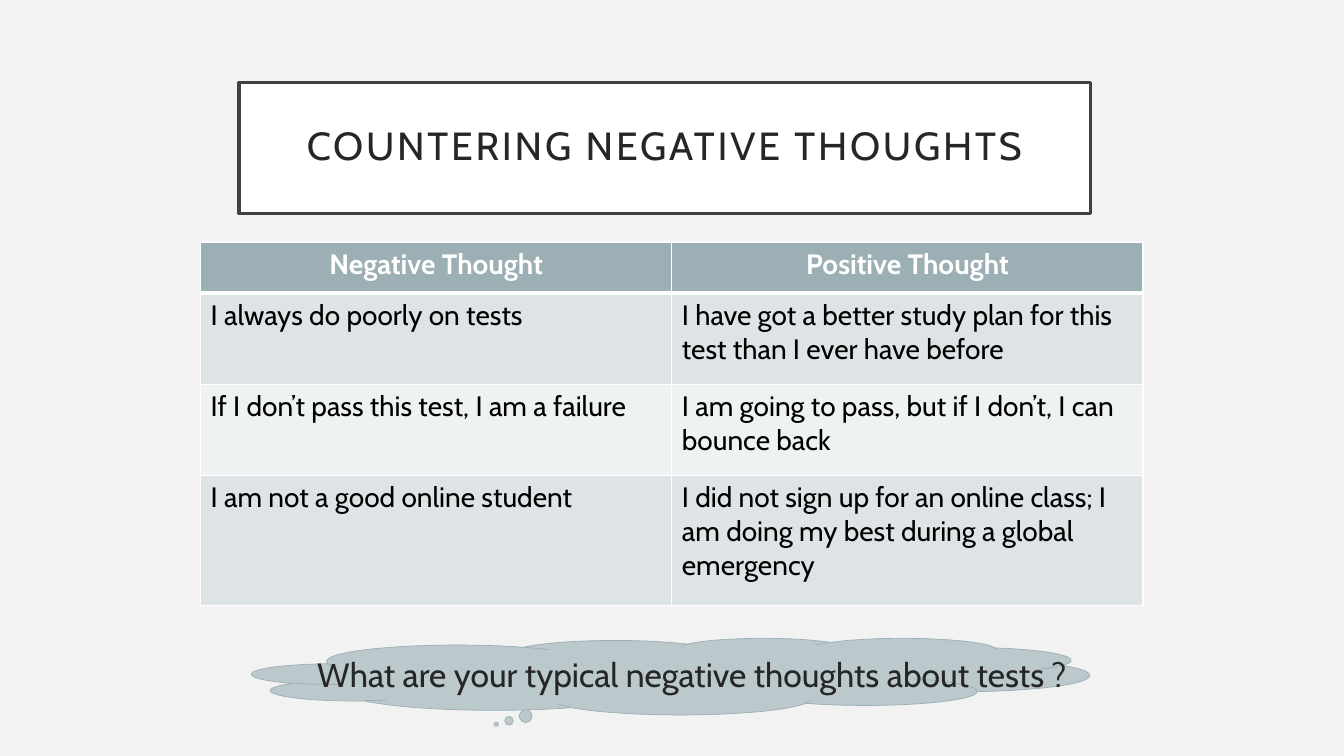
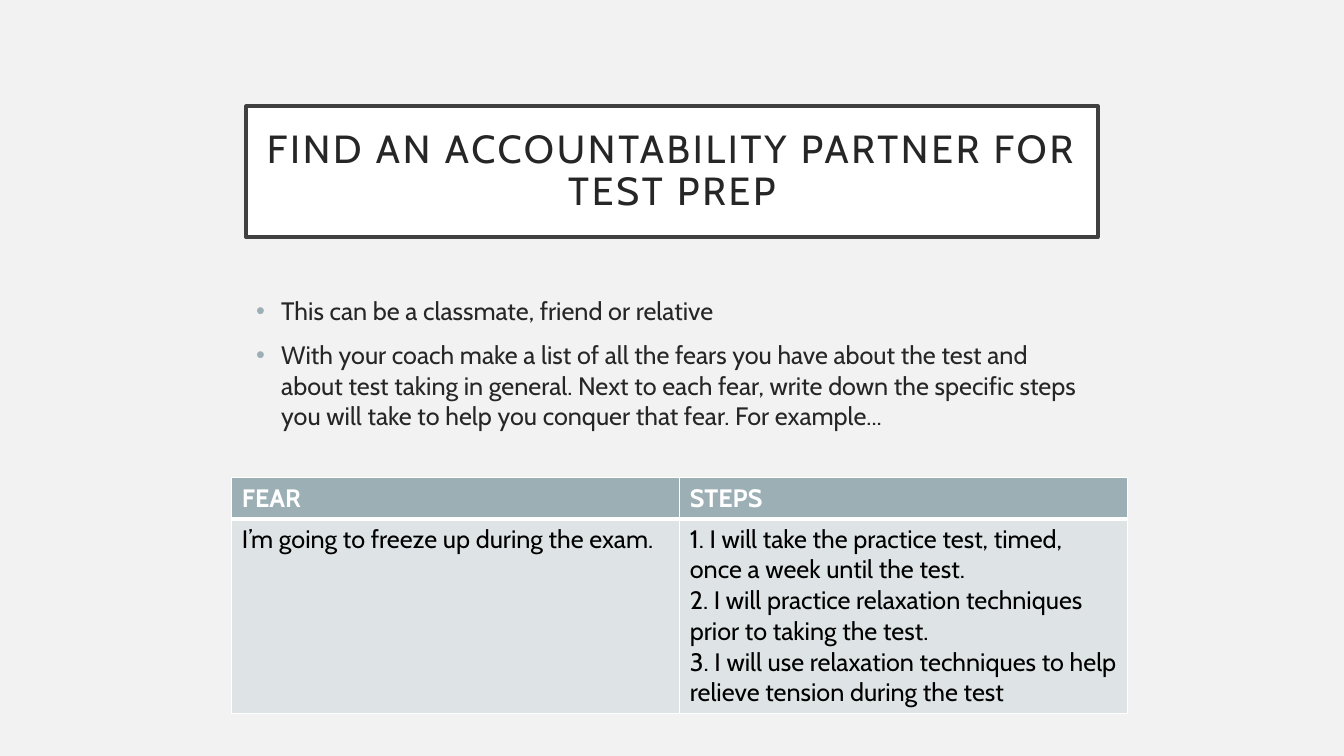
from lxml import etree
from pptx import Presentation
from pptx.dml.color import RGBColor
from pptx.enum.shapes import MSO_SHAPE
from pptx.enum.text import MSO_ANCHOR, PP_ALIGN
from pptx.oxml.ns import qn
from pptx.util import Pt

RECTANGLE, CLOUD = MSO_SHAPE.RECTANGLE, MSO_SHAPE.CLOUD_CALLOUT
LEFT, CENTER, MIDDLE = PP_ALIGN.LEFT, PP_ALIGN.CENTER, MSO_ANCHOR.MIDDLE

FONT = "Cabin"
PAPER, WHITE, BLACK = "F2F2F2", "FFFFFF", "000000"
INK, FRAME = "262626", "404040"
ACCENT, BANDS = "9BAFB5", ("DEE3E5", "EFF2F3")
CLOUD_TINTS = ("BBC8CC", "B8C6CB")


def rgb(hex_color):
    return RGBColor.from_string(hex_color)


def write(frame, text, size, color, align=LEFT, bold=False):
    """Fill a text frame, one paragraph a line, in a single style."""
    frame.word_wrap = True
    frame.text = text
    for paragraph in frame.paragraphs:
        paragraph.alignment = align
        for run in paragraph.runs:
            run.font.name, run.font.size, run.font.bold = FONT, Pt(size), bold
            run.font.color.rgb = rgb(color)


# Content: title, title position, table place and rows
slides_content = [
    {
        "title": "COUNTERING NEGATIVE THOUGHTS",
        "title_at": (170.6, 59),
        "table_at": (143.3, 172.8),
        "column": 336.6,
        "heights": (36.7, 65, 65, 93),
        "size": 20,
        "header_align": CENTER,
        "rows": [
            ("Negative Thought", "Positive Thought"),
            ("I always do poorly on tests",
             "I have got a better study plan for this test than I ever have before"),
            ("If I don’t pass this test, I am a failure",
             "I am going to pass, but if I don’t, I can bounce back"),
            ("I am not a good online student",
             "I did not sign up for an online class; I am doing my best during a global emergency"),
        ],
    },
    {
        "title": "FIND AN ACCOUNTABILITY PARTNER FOR TEST PREP",
        "title_at": (175.8, 75.8),
        "table_at": (165.6, 341.3),
        "column": 320,
        "heights": (29.2, 139),
        "size": 18,
        "header_align": LEFT,
        "rows": [
            ("FEAR", "STEPS"),
            ("I’m going to freeze up during the exam.",
             "1. I will take the practice test, timed, once a week until the test.\n"
             "2. I will practice relaxation techniques prior to taking the test.\n"
             "3. I will use relaxation techniques to help relieve tension during the test"),
        ],
    },
]

prs = Presentation()
prs.slide_width, prs.slide_height = Pt(960), Pt(540)
background = prs.slide_master.background.fill
background.solid()
background.fore_color.rgb = rgb(PAPER)

for content in slides_content:
    slide = prs.slides.add_slide(prs.slide_layouts[6])

    # Framed title
    left, top = content["title_at"]
    title = slide.shapes.add_shape(RECTANGLE, Pt(left), Pt(top), Pt(608.4), Pt(93.6))
    title.shadow.inherit = False
    title.fill.solid()
    title.fill.fore_color.rgb = rgb(WHITE)
    title.line.color.rgb = rgb(FRAME)
    title.line.width = Pt(2.5)
    frame = title.text_frame
    frame.margin_left = frame.margin_right = Pt(14.4)
    frame.margin_top = frame.margin_bottom = Pt(14.4)
    frame.vertical_anchor = MIDDLE
    write(frame, content["title"], 28, INK, CENTER)
    frame.paragraphs[0].line_spacing = 0.9
    frame.paragraphs[0].runs[0].font._element.set("spc", "200")

    # Table
    left, top = content["table_at"]
    rows, heights = content["rows"], content["heights"]
    table = slide.shapes.add_table(
        len(rows), 2, Pt(left), Pt(top), Pt(2 * content["column"]), Pt(sum(heights))).table
    for column in table.columns:
        column.width = Pt(content["column"])
    for r, texts in enumerate(rows):
        table.rows[r].height = Pt(heights[r])
        header = r == 0
        for c, text in enumerate(texts):
            cell = table.cell(r, c)
            cell.fill.solid()
            cell.fill.fore_color.rgb = rgb(ACCENT if header else BANDS[(r - 1) % 2])
            write(cell.text_frame, text, content["size"], WHITE if header else BLACK,
                  content["header_align"] if header else LEFT, header)

            # White borders, heavier under the header; they precede the fill
            widths = {"lnL": 1, "lnR": 1, "lnT": 3 if r == 1 else 1, "lnB": 3 if header else 1}
            properties = cell._tc.get_or_add_tcPr()
            for i, (side, width) in enumerate(widths.items()):
                border = etree.Element(qn("a:" + side), w=str(Pt(width)))
                fill = etree.SubElement(border, qn("a:solidFill"))
                etree.SubElement(fill, qn("a:srgbClr"), val=WHITE)
                properties.insert(i, border)

thoughts_slide, partner_slide = prs.slides

# Thought cloud with its question
cloud = thoughts_slide.shapes.add_shape(CLOUD, Pt(180), Pt(455.8), Pt(598.3), Pt(54.7))
cloud.shadow.inherit = False
cloud.fill.gradient()
cloud.fill.gradient_angle = 270
for stop, tint in zip(cloud.fill.gradient_stops, CLOUD_TINTS):
    stop.color.rgb = rgb(tint)
cloud.line.color.rgb = rgb(ACCENT)
cloud.line.width = Pt(0.5)
question = thoughts_slide.shapes.add_textbox(Pt(208.8), Pt(463.7), Pt(571), Pt(38.9)).text_frame
write(question, "What are your typical negative thoughts about tests ?", 24, INK, CENTER)
question.paragraphs[0].space_before = Pt(10)

# Bulleted advice
advice = partner_slide.shapes.add_textbox(Pt(175.8), Pt(207.4), Pt(608.4), Pt(120)).text_frame
write(advice,
      "This can be a classmate, friend or relative\n"
      "With your coach make a list of all the fears you have about the test and about test "
      "taking in general. Next to each fear, write down the specific steps you will take to "
      "help you conquer that fear. For example...",
      18, INK)
for paragraph in advice.paragraphs:
    paragraph.space_before = Pt(10)
    properties = paragraph._p.get_or_add_pPr()
    properties.set("marL", str(Pt(18)))
    properties.set("indent", str(-Pt(18)))
    bullet_color = etree.SubElement(properties, qn("a:buClr"))
    etree.SubElement(bullet_color, qn("a:srgbClr"), val=ACCENT)
    etree.SubElement(properties, qn("a:buFont"), typeface="Arial")
    etree.SubElement(properties, qn("a:buChar"), char="•")

prs.save("out.pptx")
